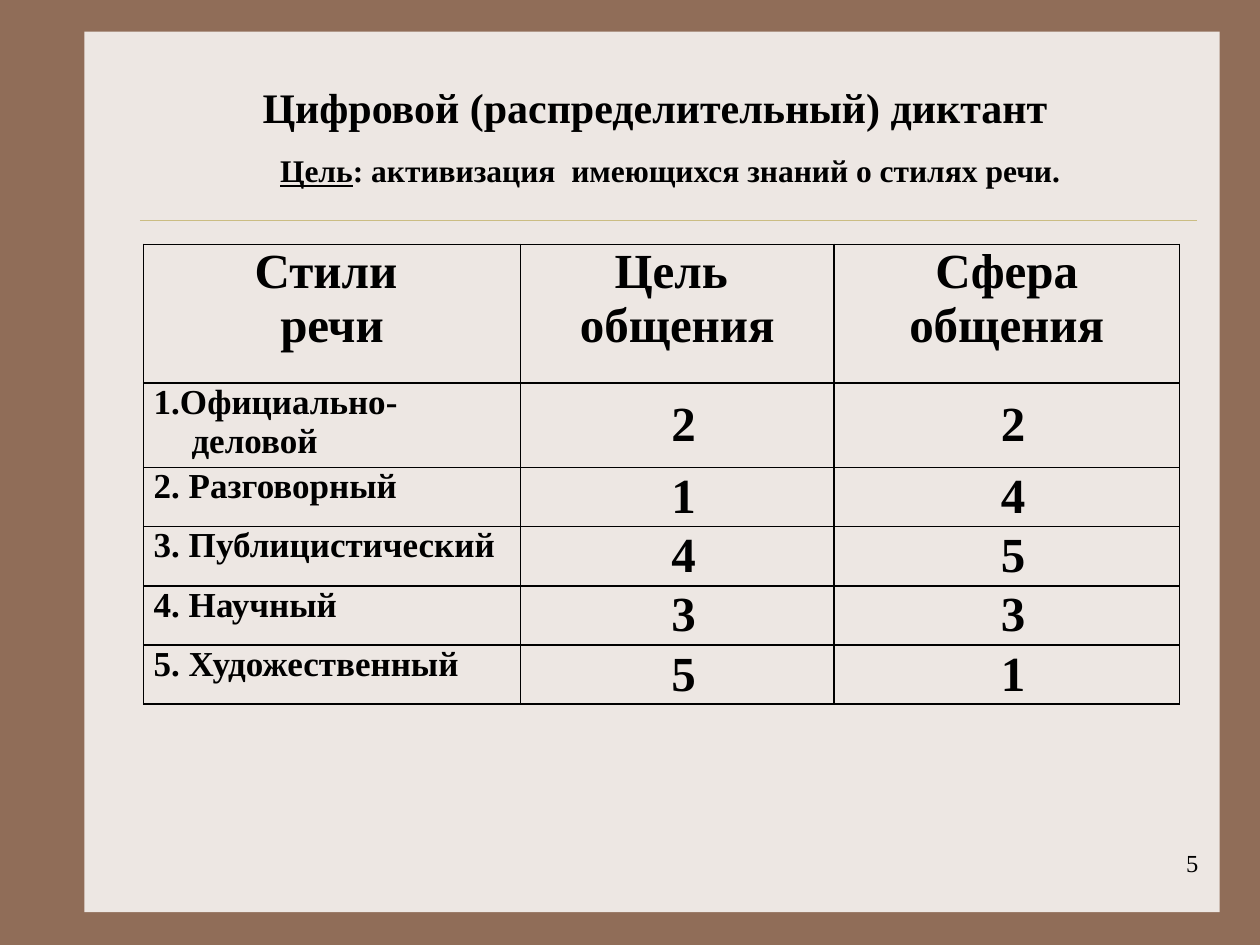
from pptx import Presentation
from pptx.dml.color import RGBColor
from pptx.enum.shapes import MSO_CONNECTOR, MSO_SHAPE
from pptx.enum.text import MSO_ANCHOR as ANCHOR, PP_ALIGN as ALIGN
from pptx.oxml import parse_xml
from pptx.oxml.ns import nsdecls
from pptx.util import Inches, Pt

COLORS = {"frame": "906D58", "panel": "EDE7E3", "rule": "CBBD83", "ink": "000000"}
FONT = "Times New Roman"


def style_text(frame, size, align, bold=True):
    for para in frame.paragraphs:
        para.alignment = align
        for span in para.runs:
            span.font.name = FONT
            span.font.size = Pt(size)
            span.font.bold = bold
            span.font.color.rgb = RGBColor.from_string(COLORS["ink"])


def add_text(page, text, left, top, width, height):
    box = page.shapes.add_textbox(Inches(left), Inches(top), Inches(width), Inches(height))
    box.text_frame.word_wrap = True
    box.text_frame.text = text
    return box.text_frame


deck = Presentation()
deck.slide_width, deck.slide_height = Inches(10), Inches(7.5)
page = deck.slides.add_slide(deck.slide_layouts[6])

# Brown frame with a light panel
page.background.fill.solid()
page.background.fill.fore_color.rgb = RGBColor.from_string(COLORS["frame"])
panel = page.shapes.add_shape(
    MSO_SHAPE.RECTANGLE, Inches(0.67), Inches(0.25), Inches(9.01), Inches(6.99))
panel.shadow.inherit = False
panel.fill.solid()
panel.fill.fore_color.rgb = RGBColor.from_string(COLORS["panel"])
panel.line.fill.background()

# Thin rule under the heading
rule = page.shapes.add_connector(
    MSO_CONNECTOR.STRAIGHT, Inches(1.11), Inches(1.75), Inches(9.5), Inches(1.75))
rule.line.color.rgb = RGBColor.from_string(COLORS["rule"])
rule.line.width = Pt(0.25)
rule._element.spPr.append(parse_xml(f"<a:effectLst {nsdecls('a')}/>"))

# Slide number
number = add_text(page, "5", 7.53, 6.68, 2.08, 0.5)
style_text(number, 14, ALIGN.RIGHT, bold=False)

# Table of styles
rows = [
    ("Стили \nречи", "Цель \nобщения", "Сфера общения"),
    ("1.Официально-деловой", "2", "2"),
    ("2. Разговорный", "1", "4"),
    ("3. Публицистический", "4", "5"),
    ("4. Научный", "3", "3"),
    ("5. Художественный", "5", "1"),
]
widths = [2.99, 2.49, 2.74]
heights = [1.1, 0.67] + [0.47] * 4
table = page.shapes.add_table(
    len(rows), len(widths), Inches(1.14), Inches(1.94),
    Inches(sum(widths)), Inches(sum(heights))).table
table.first_row = table.horz_banding = False
for column, width in zip(table.columns, widths):
    column.width = Inches(width)
for row, height in zip(table.rows, heights):
    row.height = Inches(height)

for r, texts in enumerate(rows):
    for c, text in enumerate(texts):
        cell = table.cell(r, c)
        is_digit = r > 0 and c > 0
        is_name = r > 0 and c == 0
        cell.margin_left = Inches(0.18 if is_digit else 0.08)
        cell.margin_right = Inches(0.08)
        cell.margin_top = cell.margin_bottom = 0
        cell.vertical_anchor = ANCHOR.MIDDLE if is_digit else ANCHOR.TOP
        cell.text_frame.text = text
        style_text(cell.text_frame, 20 if is_name else 28,
                   ALIGN.JUSTIFY if is_name else ALIGN.CENTER)
        properties = cell._tc.get_or_add_tcPr()
        for side in ("lnL", "lnR", "lnT", "lnB"):
            properties.append(parse_xml(
                f'<a:{side} {nsdecls("a")} w="{Pt(1)}"><a:solidFill>'
                f'<a:srgbClr val="{COLORS["ink"]}"/></a:solidFill></a:{side}>'))
        cell.fill.background()

# Hanging indent for the name that wraps
wrapped = table.cell(1, 0).text_frame.paragraphs[0]._p.get_or_add_pPr()
wrapped.set("marL", str(Inches(0.3)))
wrapped.set("indent", str(-Inches(0.3)))

# Heading and aim
aim = add_text(page, "Цель", 1.3, 1.15, 8.04, 0.4)
aim.vertical_anchor = ANCHOR.MIDDLE
aim.paragraphs[0].add_run().text = ": активизация  имеющихся знаний о стилях речи."
style_text(aim, 18, ALIGN.CENTER)
aim.paragraphs[0].runs[0].font.underline = True

title = add_text(page, "Цифровой (распределительный) диктант ", 1.3, 0.6, 7.88, 0.5)
style_text(title, 24, ALIGN.CENTER)

deck.save("out.pptx")
